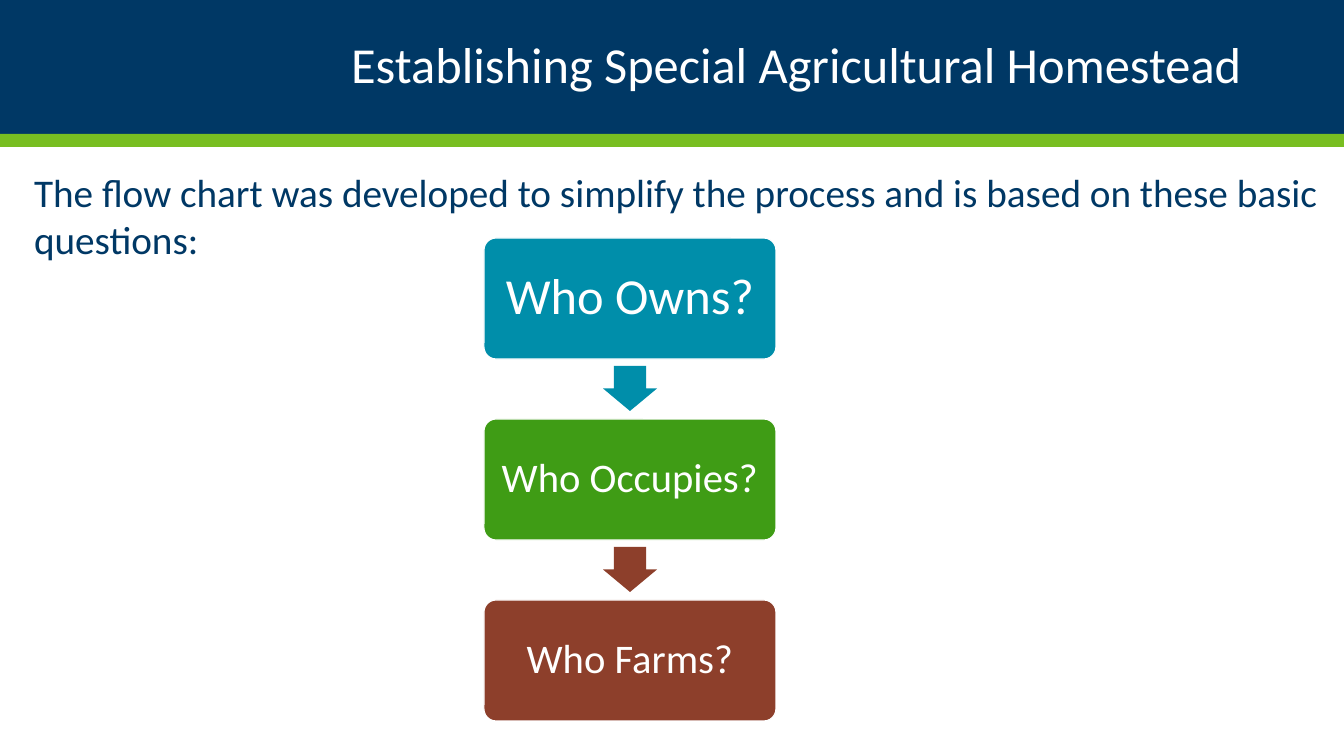
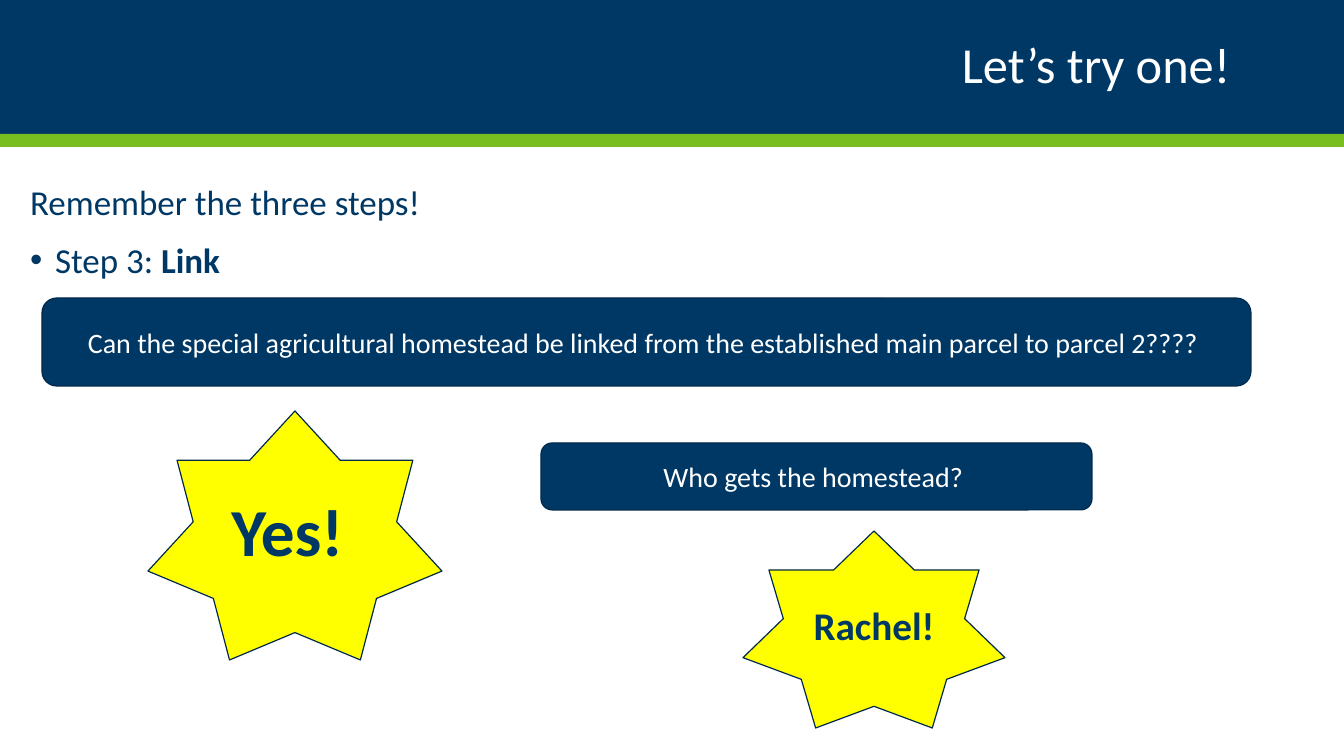
from lxml.etree import SubElement
from pptx import Presentation
from pptx.dml.color import RGBColor
from pptx.enum.shapes import MSO_SHAPE as SHAPE
from pptx.enum.text import MSO_ANCHOR as ANCHOR, MSO_AUTO_SIZE as FIT, PP_ALIGN as ALIGN
from pptx.oxml.ns import qn
from pptx.util import Pt

PX = 9071  # EMU in one px
NAVY, GREEN, WHITE, YELLOW, OUTLINE = "003865", "78BE21", "FFFFFF", "FFFF00", "00294B"
TEAL, LEAF, BROWN = "008EAA", "3F9C15", "8D3F2B"
rgb = RGBColor.from_string


def write(p, text, size, color=NAVY, bold=False, align=None, spacing=1.0):
    """Add a formatted run to a paragraph."""
    p.alignment, p.line_spacing = align, spacing
    r = p.add_run()
    r.text = text
    r.font.name, r.font.size, r.font.bold = "Calibri", Pt(size), bold
    r.font.color.rgb = rgb(color)


def add_box(s, kind, box, fill, line=None):
    """Add a filled preset shape; box is left, top, width, height in px."""
    sp = s.shapes.add_shape(kind, *(v * PX for v in box))
    sp.shadow.inherit = False
    sp.fill.solid()
    sp.fill.fore_color.rgb = rgb(fill)
    if line:
        sp.line.color.rgb, sp.line.width = rgb(line), Pt(0.85)
    else:
        sp.line.fill.background()
    sp.text_frame.word_wrap = True
    sp.text_frame.vertical_anchor = ANCHOR.MIDDLE
    return sp


prs = Presentation()
prs.slide_width, prs.slide_height = 1344 * PX, 756 * PX
layout = prs.slide_layouts[1]

# Shared title and body frames
for ph, box in zip(layout.placeholders, [(93, 17, 1159, 101), (24, 163, 1304, 524)]):
    ph.left, ph.top, ph.width, ph.height = (v * PX for v in box)
    ph.text_frame.auto_size = FIT.NONE
layout.placeholders[0].text_frame.vertical_anchor = ANCHOR.MIDDLE

# Slides with titles
flow, example = slides = [prs.slides.add_slide(layout) for _ in range(2)]
for s, title in zip(slides, ["Establishing Special Agricultural Homestead", "Let’s try one! "]):
    write(s.shapes.title.text_frame.paragraphs[0], title, 36, WHITE,
          align=ALIGN.RIGHT, spacing=0.9)

# Bands, moved to the back of the layout
for i, (top, height, color) in enumerate([(0, 134, NAVY), (134, 13, GREEN)]):
    band = add_box(flow, SHAPE.RECTANGLE, (0, top, 1344, height), color).element
    band.nvSpPr.cNvPr.set("id", str(100 + i))
    layout.shapes.element.insert(2 + i, band)

# Body text: each paragraph is (bulleted, runs), each run (text, bold)
body = example.placeholders[1]
body.left, body.top, body.width, body.height = (v * PX for v in (20, 175, 1304, 524))
intro = "The flow chart was developed to simplify the process and is based on these basic questions:"
bodies = [
    (flow, 28, 10, [(False, [(intro, False)])]),
    (example, 25, 6, [(False, [("Remember the three steps!", False)]),
                      (True, [("Step 3: ", False), ("Link", True)])]),
]
for s, size, gap, paragraphs in bodies:
    tf = s.placeholders[1].text_frame
    for i, (bulleted, runs) in enumerate(paragraphs):
        p = tf.add_paragraph() if i else tf.paragraphs[0]
        pPr = p._p.get_or_add_pPr()
        indent = 25 * PX if bulleted else 0
        pPr.set("marL", str(indent))
        pPr.set("indent", str(-indent))
        if bulleted:
            SubElement(SubElement(pPr, qn("a:buClr")), qn("a:srgbClr"), val=NAVY)
            SubElement(pPr, qn("a:buChar"), char="•")
        else:
            SubElement(pPr, qn("a:buNone"))
        p.space_before, p.space_after = Pt(gap if i else 0), Pt(gap)
        for text, bold in runs:
            write(p, text, size, bold=bold)

# Flow chart: an arrow above every step but the first
steps = [("Who Owns?", 36, 15, TEAL, None),
         ("Who Occupies?", 29, 12, LEAF, TEAL),
         ("Who Farms?", 29, 12, BROWN, BROWN)]
for i, (text, size, inset, fill, arrow_fill) in enumerate(steps):
    top = 238 + 181 * i
    if arrow_fill:
        arrow = add_box(flow, SHAPE.DOWN_ARROW, (603, top - 53, 54, 45), arrow_fill)
        arrow.adjustments[0], arrow.adjustments[1] = 0.6, 0.5
    step = add_box(flow, SHAPE.ROUNDED_RECTANGLE, (484, top, 292, 121), fill, WHITE)
    step.adjustments[0] = 0.1
    tf = step.text_frame
    tf.margin_left = tf.margin_right = tf.margin_top = tf.margin_bottom = inset * PX
    write(tf.paragraphs[0], text, size, WHITE, align=ALIGN.CENTER, spacing=0.9)

# Questions and star answers
question = "Can the special agricultural homestead be linked from the established main parcel to parcel 2???? "
callouts = [
    (SHAPE.ROUNDED_RECTANGLE, (42, 298, 1209, 88), question, 20),
    (SHAPE.STAR_7_POINT, (148, 411, 294, 249), "Yes! ", 48),
    (SHAPE.ROUNDED_RECTANGLE, (541, 443, 551, 67), "Who gets the homestead? ", 20),
    (SHAPE.STAR_7_POINT, (743, 531, 262, 197), "Rachel! ", 28),
]
for kind, box, text, size in callouts:
    star = kind == SHAPE.STAR_7_POINT
    sp = add_box(example, kind, box, YELLOW if star else NAVY, OUTLINE)
    write(sp.text_frame.paragraphs[0], text, size, NAVY if star else WHITE,
          bold=star, align=ALIGN.CENTER)

prs.save("out.pptx")
